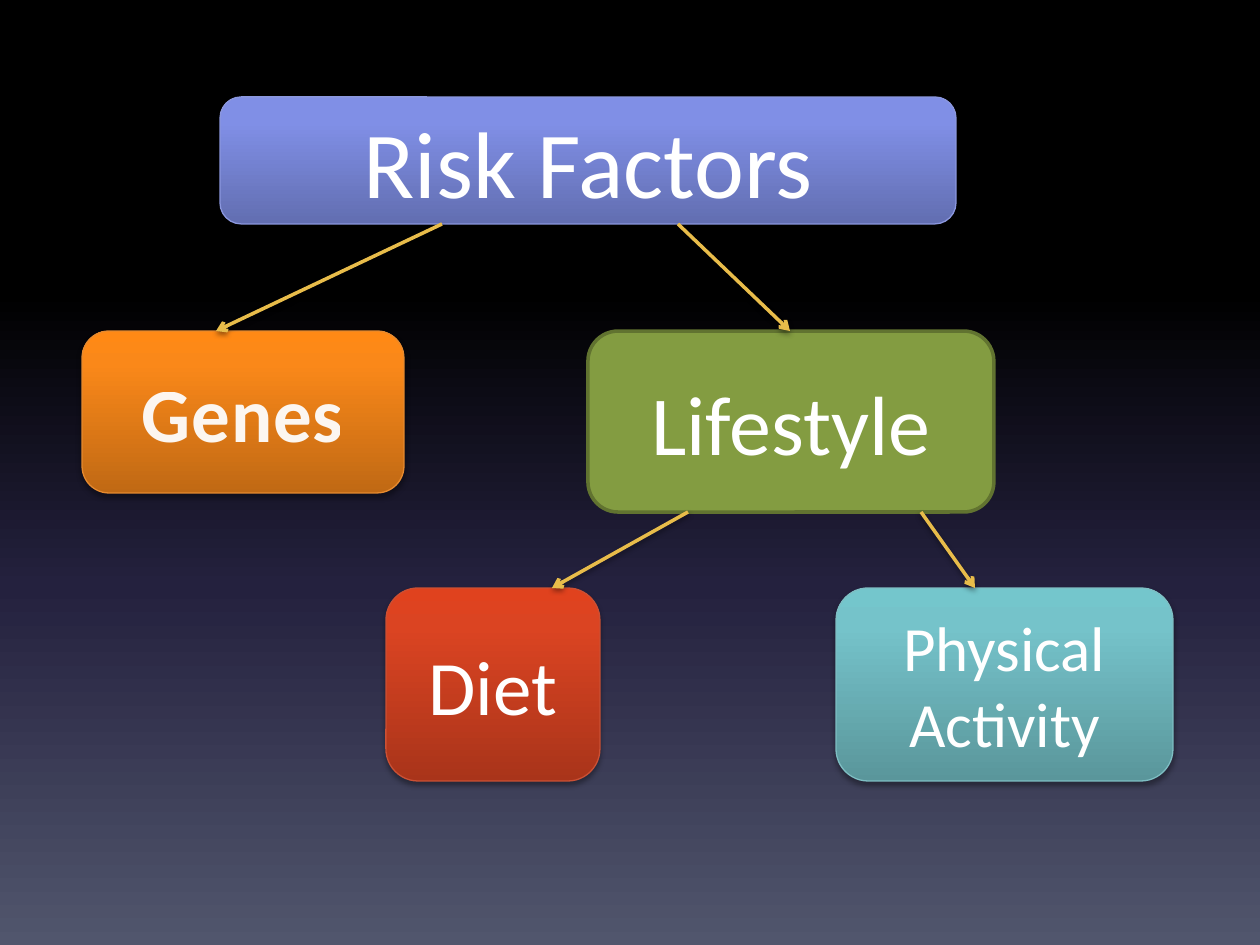
from lxml.etree import SubElement
from pptx import Presentation
from pptx.dml.color import RGBColor
from pptx.enum.shapes import MSO_CONNECTOR as Connector, MSO_SHAPE as Shape
from pptx.enum.text import MSO_ANCHOR as Anchor, PP_ALIGN as Align
from pptx.oxml.ns import qn
from pptx.util import Emu, Pt

PX = 914400 / 126
FONT = "Calibri"

COLOURS = {
    "white": "FFFFFF",
    "black": "000000",
    "arrow": "E8BC4A",
    "lifestyle": "839C41",
    "lifestyle line": "617330",
    "genes line": "E68A2F",
    "genes text": "FEFDFC",
    "genes outline": "2F260F",
    "diet line": "CB5034",
    "activity line": "7EBEC3",
    "risk line": "8B97DE",
}

# Gradient stops as (percent, colour)
BACKGROUND = [(0, "000000"), (31, "000000"), (62, "24213E"), (100, "51566D")]
GENES = [(0, "C06914"), (80, "FA8819"), (100, "FF8915")]
DIET = [(0, "A9341A"), (80, "DB4422"), (100, "E0421E")]
ACTIVITY = [(0, "5A969B"), (80, "75C3CA"), (100, "74C6CC")]
RISK = [(0, "626EB1"), (80, "808FE6"), (100, "7E8EE9")]

# Text, box in px, fill, line colour, line width, text size
BOXES = [
    ("Lifestyle", (588, 331, 406, 181), "lifestyle", "lifestyle line", 2, 48),
    ("Genes", (82, 331, 322, 162), GENES, "genes line", 0.75, 44),
    ("Diet", (386, 588, 214, 193), DIET, "diet line", 0.75, 44),
    ("Physical Activity", (836, 588, 337, 193), ACTIVITY, "activity line", 0.75, 36),
    ("Risk Factors", (220, 97, 736, 127), RISK, "risk line", 0.75, 54),
]

# Start and end of each arrow in px
ARROWS = [
    ((442, 224), (216, 331)),
    ((678, 224), (790, 331)),
    ((688, 512), (552, 588)),
    ((921, 512), (975, 588)),
]


def px(*lengths):
    return [Emu(round(length * PX)) for length in lengths]


def rgb(name):
    return RGBColor.from_string(COLOURS[name])


def add_colour(parent, value, alpha=None):
    colour = SubElement(parent, qn("a:srgbClr"), val=value)
    if alpha is not None:
        SubElement(colour, qn("a:alpha"), val=str(alpha * 1000))


def set_gradient(fill, element, stops, angle):
    fill.gradient()
    fill.gradient_angle = angle
    stop_list = element.find(".//" + qn("a:gsLst"))
    for stop in list(stop_list):
        stop_list.remove(stop)
    for percent, value in stops:
        add_colour(SubElement(stop_list, qn("a:gs"), pos=str(percent * 1000)), value)


def add_shadow(effects, alpha, distance):
    shadow = SubElement(effects, qn("a:outerShdw"), blurRad=str(Pt(3.1)),
                        dist=str(Pt(distance)), dir="5400000", rotWithShape="0")
    add_colour(shadow, COLOURS["black"], alpha)


def add_box(slide, text, box, fill, line, width, size):
    shape = slide.shapes.add_shape(Shape.ROUNDED_RECTANGLE, *px(*box))
    shape.line.color.rgb = rgb(line)
    shape.line.width = Pt(width)
    shape.shadow.inherit = False
    if isinstance(fill, list):
        set_gradient(shape.fill, shape.element, fill, 90)
        add_shadow(shape.element.spPr.find(qn("a:effectLst")), 35, 1.8)
    else:
        shape.fill.solid()
        shape.fill.fore_color.rgb = rgb(fill)

    frame = shape.text_frame
    frame.word_wrap = True
    frame.vertical_anchor = Anchor.MIDDLE
    paragraph = frame.paragraphs[0]
    paragraph.alignment = Align.CENTER
    run = paragraph.add_run()
    run.text = text
    run.font.name = FONT
    run.font.size = Pt(size)
    run.font.color.rgb = rgb("white")
    return run


def add_lettering(run):
    """Bold, spaced, slightly transparent letters with a faint outline."""
    run.font.bold = True
    run.font.color.rgb = rgb("genes text")
    properties = run.font._element
    properties.set("spc", "50")
    colour = properties.find(".//" + qn("a:srgbClr"))
    SubElement(colour, qn("a:alpha"), val="95000")
    outline = SubElement(properties, qn("a:ln"), w=str(Pt(1.06)))
    add_colour(SubElement(outline, qn("a:solidFill")), COLOURS["genes outline"], 6)
    properties.insert(0, outline)


def add_arrow(slide, start, end):
    arrow = slide.shapes.add_connector(Connector.STRAIGHT, *px(*start, *end))
    arrow.line.color.rgb = rgb("arrow")
    arrow.line.width = Pt(2)
    properties = arrow.element.spPr
    SubElement(properties.find(qn("a:ln")), qn("a:tailEnd"), type="arrow")
    add_shadow(SubElement(properties, qn("a:effectLst")), 38, 1.6)


def main():
    presentation = Presentation()
    presentation.slide_width, presentation.slide_height = px(1260, 945)
    slide = presentation.slides.add_slide(presentation.slide_layouts[6])
    set_gradient(slide.background.fill, slide.element, BACKGROUND, 270)

    # Boxes of the tree
    runs = {box[0]: add_box(slide, *box) for box in BOXES}
    add_lettering(runs["Genes"])

    # Arrows from each parent to its children
    for start, end in ARROWS:
        add_arrow(slide, start, end)

    presentation.save("out.pptx")


if __name__ == "__main__":
    main()
